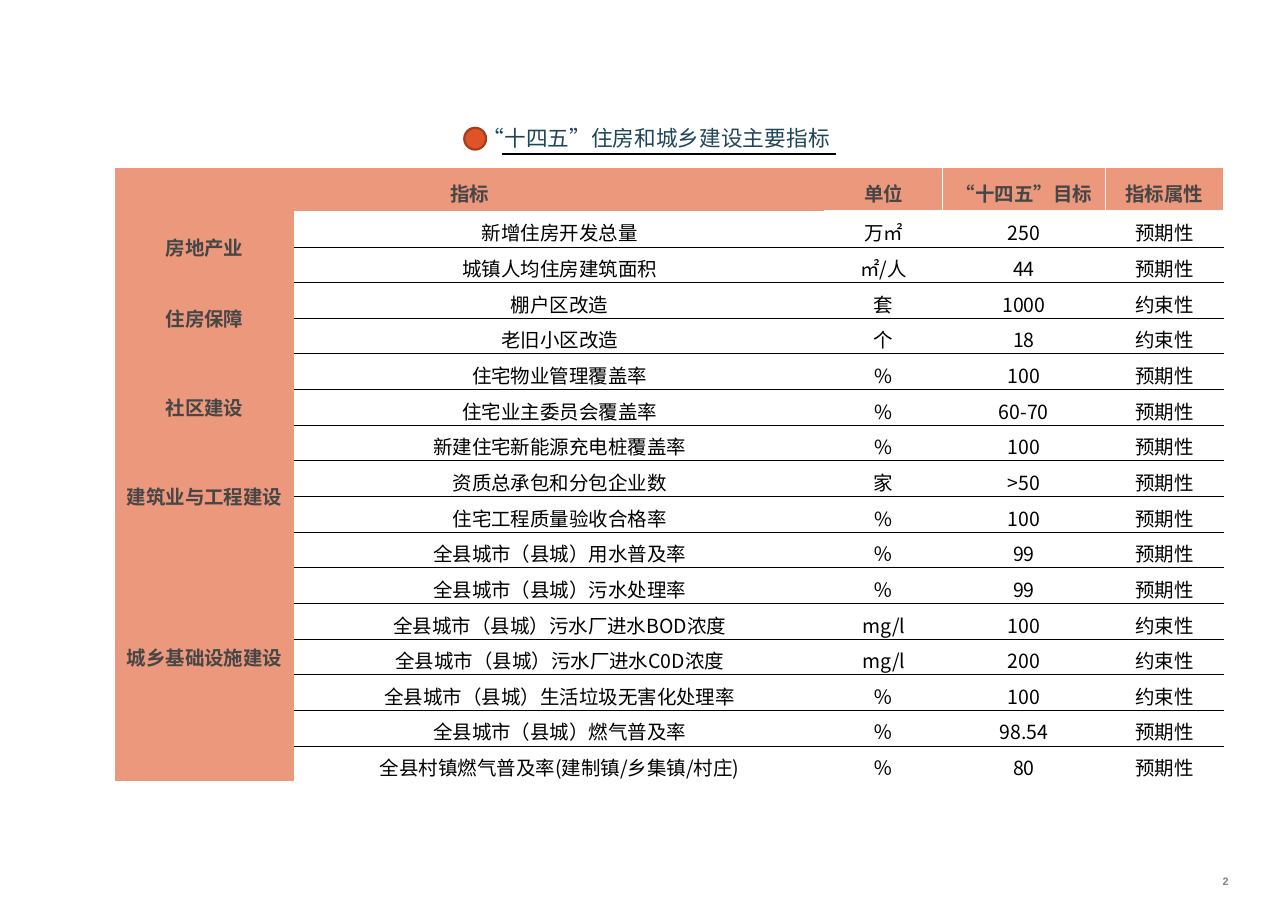
from dataclasses import dataclass
from typing import Optional

from lxml.etree import SubElement
from pptx import Presentation
from pptx.dml.color import RGBColor as Rgb
from pptx.enum.shapes import MSO_CONNECTOR as Connector, MSO_SHAPE as Preset
from pptx.enum.text import MSO_ANCHOR as Anchor, MSO_AUTO_SIZE as AutoSize, PP_ALIGN as Align
from pptx.oxml.ns import qn
from pptx.slide import Slide
from pptx.table import Table, _Cell as Cell
from pptx.text.text import TextFrame
from pptx.util import Inches, Pt


@dataclass(frozen=True)
class Theme:
    font: str = "Noto Sans CJK SC"
    number_font: str = "Arial"
    title_size: float = 20
    table_size: float = 18
    number_size: float = 10
    title: str = "20455A"
    heading: str = "464646"
    ink: str = "000000"
    paper: str = "FFFFFF"
    salmon: str = "EC987D"
    marker: str = "DF5327"
    marker_edge: str = "A53D1D"
    page_number: str = "838383"


@dataclass(frozen=True)
class Border:
    color: str
    points: float


@dataclass(frozen=True)
class Edges:
    left: Optional[Border] = None
    right: Optional[Border] = None
    top: Optional[Border] = None
    bottom: Optional[Border] = None


@dataclass(frozen=True)
class Indicator:
    name: str
    unit: str
    target: str
    kind: str


@dataclass(frozen=True)
class Sector:
    name: str
    indicators: tuple[Indicator, ...]


THEME = Theme()
WHITE = Border(THEME.paper, 1)
THICK_WHITE = Border(THEME.paper, 3)
RULE = Border(THEME.ink, 0.5)
EXPECTED, BINDING = "预期性", "约束性"

SECTORS = (
    Sector("房地产业", (
        Indicator("新增住房开发总量", "万㎡", "250", EXPECTED),
        Indicator("城镇人均住房建筑面积", "㎡/人", "44", EXPECTED),
    )),
    Sector("住房保障", (
        Indicator("棚户区改造", "套", "1000", BINDING),
        Indicator("老旧小区改造", "个", "18", BINDING),
    )),
    Sector("社区建设", (
        Indicator("住宅物业管理覆盖率", "%", "100", EXPECTED),
        Indicator("住宅业主委员会覆盖率", "%", "60-70", EXPECTED),
        Indicator("新建住宅新能源充电桩覆盖率", "%", "100", EXPECTED),
    )),
    Sector("建筑业与工程建设", (
        Indicator("资质总承包和分包企业数", "家", ">50", EXPECTED),
        Indicator("住宅工程质量验收合格率", "%", "100", EXPECTED),
    )),
    Sector("城乡基础设施建设", (
        Indicator("全县城市（县城）用水普及率", "％", "99", EXPECTED),
        Indicator("全县城市（县城）污水处理率", "％", "99", EXPECTED),
        Indicator("全县城市（县城）污水厂进水BOD浓度", "mg/l", "100", BINDING),
        Indicator("全县城市（县城）污水厂进水C0D浓度", "mg/l", "200", BINDING),
        Indicator("全县城市（县城）生活垃圾无害化处理率", "％", "100", BINDING),
        Indicator("全县城市（县城）燃气普及率", "％", "98.54", EXPECTED),
        Indicator("全县村镇燃气普及率(建制镇/乡集镇/村庄)", "％", "80", EXPECTED),
    )),
)
CM_PER_INCH = 2.54
A3_WIDTH_CM, A3_HEIGHT_CM = 42, 29.7
COLUMN_WIDTHS = (2.31, 6.81, 1.51, 2.09, 1.52)
HEADER_HEIGHT = 0.56
TABLE_HEIGHT = 7.88


def write(frame: TextFrame, text: str, *, size: float, color: str, font: str = THEME.font,
          bold: bool = False, align: Align = Align.CENTER, spacing: float = 1.0,
          after: float = 0) -> None:
    paragraph = frame.paragraphs[0]
    paragraph.alignment = align
    paragraph.line_spacing = spacing
    paragraph.space_before = Pt(0)
    paragraph.space_after = Pt(after)
    run = paragraph.add_run()
    run.text = text
    run.font.size = Pt(size)
    run.font.bold = bold
    run.font.name = font
    run.font.color.rgb = Rgb.from_string(color)
    SubElement(run.font._element, qn("a:ea"), typeface=font)


def draw_edges(cell: Cell, edges: Edges) -> None:
    properties = cell._tc.get_or_add_tcPr()
    sides = (("a:lnL", edges.left), ("a:lnR", edges.right),
             ("a:lnT", edges.top), ("a:lnB", edges.bottom))
    for position, (tag, border) in enumerate(sides):
        line = SubElement(properties, qn(tag), w=str(Pt(border.points) if border else 0))
        if border:
            fill = SubElement(line, qn("a:solidFill"))
            SubElement(fill, qn("a:srgbClr"), val=border.color)
        else:
            SubElement(line, qn("a:noFill"))
        properties.insert(position, line)


def fill_cell(cell: Cell, text: str, *, edges: Edges = Edges(), heading: bool = False,
              spacing: float = 1.25, side: float = 0.07, end: float = 0) -> None:
    cell.fill.solid()
    cell.fill.fore_color.rgb = Rgb.from_string(THEME.salmon if heading else THEME.paper)
    cell.vertical_anchor = Anchor.MIDDLE
    cell.margin_left = cell.margin_right = Inches(side)
    cell.margin_top = cell.margin_bottom = Inches(end)
    write(cell.text_frame, text, size=THEME.table_size, bold=heading, spacing=spacing,
          color=THEME.heading if heading else THEME.ink)
    draw_edges(cell, edges)


def fill_header(table: Table) -> None:
    table.cell(0, 0).merge(table.cell(0, 1))
    fill_cell(table.cell(0, 0), "指标", heading=True, side=0.13, end=0.06)
    for column, label in enumerate(("单位", "“十四五”目标", "指标属性"), start=2):
        edges = Edges(WHITE if column > 2 else None, WHITE, WHITE, THICK_WHITE)
        fill_cell(table.cell(0, column), label, edges=edges, heading=True, side=0.1)


def fill_sector(table: Table, sector: Sector, first: int, last_row: int) -> None:
    table.cell(first, 0).merge(table.cell(first + len(sector.indicators) - 1, 0))
    fill_cell(table.cell(first, 0), sector.name, heading=True, spacing=1.0, side=0.13, end=0.06)
    for row, item in enumerate(sector.indicators, start=first):
        bottom = WHITE if row == last_row else RULE
        top = RULE if row > 1 else None
        fill_cell(table.cell(row, 1), item.name, edges=Edges(None, WHITE, top, bottom), side=0.1)
        for column, value in enumerate((item.unit, item.target, item.kind), start=2):
            fill_cell(table.cell(row, column), value,
                      edges=Edges(WHITE, WHITE, top or WHITE, bottom))


def add_indicator_table(slide: Slide) -> None:
    count = sum(len(sector.indicators) for sector in SECTORS)
    table = slide.shapes.add_table(
        count + 1, len(COLUMN_WIDTHS), Inches(1.47), Inches(2.15),
        Inches(sum(COLUMN_WIDTHS)), Inches(TABLE_HEIGHT)).table
    table.first_row = table.horz_banding = False
    for column, width in zip(table.columns, COLUMN_WIDTHS):
        column.width = Inches(width)
    for row in table.rows:
        row.height = Inches((TABLE_HEIGHT - HEADER_HEIGHT) / count)
    table.rows[0].height = Inches(HEADER_HEIGHT)
    fill_header(table)
    first = 1
    for sector in SECTORS:
        fill_sector(table, sector, first, count)
        first += len(sector.indicators)


def add_heading(slide: Slide) -> None:
    heading = slide.shapes.title
    heading.left, heading.top = Inches(6.1), Inches(1.42)
    heading.width, heading.height = Inches(5.83), Inches(0.54)
    frame = heading.text_frame
    frame.word_wrap = True
    frame.auto_size = AutoSize.SHAPE_TO_FIT_TEXT
    frame.vertical_anchor = Anchor.MIDDLE
    write(frame, "“十四五”住房和城乡建设主要指标", size=THEME.title_size,
          color=THEME.title, align=Align.LEFT, spacing=1.5, after=5)

    marker = slide.shapes.add_shape(Preset.FLOWCHART_CONNECTOR, Inches(5.96), Inches(1.64),
                                    Inches(0.28), Inches(0.28))
    marker.shadow.inherit = False
    marker.fill.solid()
    marker.fill.fore_color.rgb = Rgb.from_string(THEME.marker)
    marker.line.color.rgb = Rgb.from_string(THEME.marker_edge)
    marker.line.width = Pt(2)

    underline = slide.shapes.add_connector(Connector.STRAIGHT, Inches(6.44), Inches(1.98),
                                           Inches(10.73), Inches(1.98))
    underline.line.color.rgb = Rgb.from_string(THEME.ink)
    underline.line.width = Pt(1.5)
    SubElement(underline._element.spPr, qn("a:effectLst"))


def add_page_number(slide: Slide) -> None:
    frame = slide.shapes.add_textbox(Inches(14.91), Inches(11.06),
                                     Inches(1.65), Inches(0.49)).text_frame
    frame.word_wrap = True
    frame.vertical_anchor = Anchor.MIDDLE
    write(frame, "2", size=THEME.number_size, color=THEME.page_number,
          font=THEME.number_font, bold=True)


def main() -> None:
    deck = Presentation()
    deck.slide_width = Inches(A3_WIDTH_CM / CM_PER_INCH)
    deck.slide_height = Inches(A3_HEIGHT_CM / CM_PER_INCH)
    slide = deck.slides.add_slide(deck.slide_layouts[5])
    add_heading(slide)
    add_indicator_table(slide)
    add_page_number(slide)
    deck.save("out.pptx")


if __name__ == "__main__":
    main()
